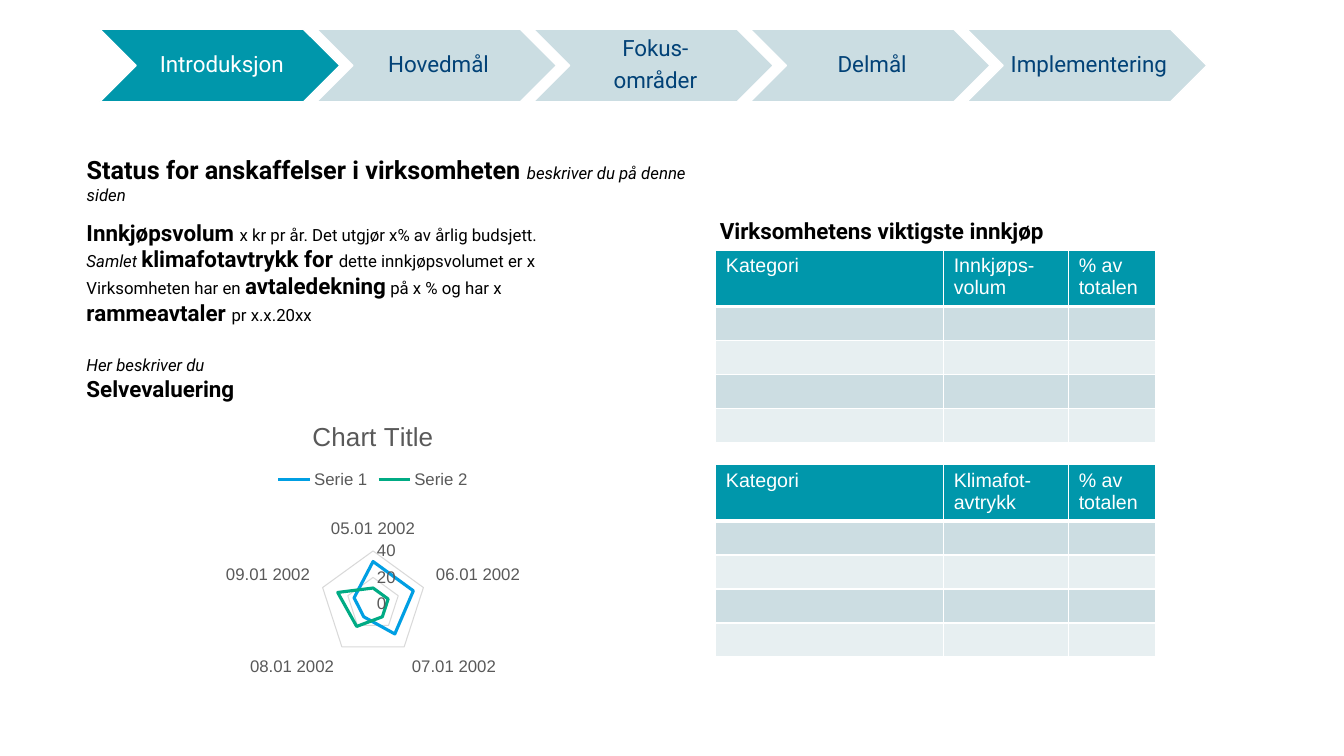
"""Build the procurement status slide with step arrows, status texts, a radar chart and two tables."""
from lxml.etree import SubElement
from pptx import Presentation
from pptx.chart.data import CategoryChartData
from pptx.dml.color import RGBColor
from pptx.enum.chart import XL_CHART_TYPE as ChartType, XL_LEGEND_POSITION as LegendPosition, XL_TICK_MARK as TickMark
from pptx.enum.shapes import MSO_SHAPE as Shape
from pptx.enum.text import MSO_ANCHOR as Anchor, MSO_AUTO_SIZE as AutoSize, PP_ALIGN as Align
from pptx.oxml.ns import qn
from pptx.util import Inches, Pt

COLORS = {
    "teal": "0097AB", "pale": "CBDDE2", "navy": "024277", "white": "FFFFFF", "black": "000000",
    "band": "CCDDE2", "light": "E7EFF1", "gray": "595959", "grid": "D9D9D9",
    "blue": "009FE3", "green": "00AB84",
}
STYLES = {
    "heading": {"size": Pt(18), "bold": True, "italic": False},
    "strong": {"size": Pt(16), "bold": True, "italic": False},
    "plain": {"size": Pt(12), "bold": False, "italic": False},
    "hint": {"size": Pt(12), "bold": False, "italic": True},
}

STEPS = [["Introduksjon"], ["Hovedmål"], ["Fokus-", "områder"], ["Delmål"], ["Implementering"]]
TITLE = [[("Status for anskaffelser i virksomheten ", "heading"), ("beskriver du på denne siden", "hint")]]
TEXTS = [
    ((0.76, 2.12, 5.1, 1.38), [
        [("Innkjøpsvolum ", "strong"), ("x kr pr år. Det utgjør x% av årlig budsjett.", "plain")],
        [("Samlet ", "hint"), ("klimafotavtrykk for ", "strong"), ("dette innkjøpsvolumet er x", "plain")],
        [("Virksomheten har en ", "plain"), ("avtaledekning", "strong"), (" på x % og har x ", "plain"),
         ("rammeavtaler ", "strong"), ("pr x.x.20xx", "plain")],
    ]),
    ((0.76, 3.47, 5.1, 0.6), [[("Her beskriver du", "hint")], [("Selvevaluering", "strong")]]),
    ((7.04, 2.11, 3.89, 0.37), [[("Virksomhetens viktigste innkjøp", "strong")]]),
]
TABLES = [
    [["Kategori"], ["Innkjøps-", "volum"], ["% av totalen"]],
    [["Kategori"], ["Klimafot-", "avtrykk"], ["% av totalen"]],
]
COLUMNS = [2.26, 1.24, 0.86]
ROWS = [0.56] + [0.33] * 4
DATES = ["05.01 2002", "06.01 2002", "07.01 2002", "08.01 2002", "09.01 2002"]
SERIES = [("Serie 1", [32, 32, 28, 12, 15], "blue"), ("Serie 2", [12, 12, 12, 21, 28], "green")]


def color(name):
    return RGBColor.from_string(COLORS[name])


def inches(values):
    return [Inches(value) for value in values]


def style_font(font, tint, name="Roboto", **values):
    for key, value in {"name": name, **values}.items():
        setattr(font, key, value)
    font.color.rgb = color(tint)


def write(frame, paragraphs):
    frame.word_wrap = True
    frame.auto_size = AutoSize.NONE
    frame.vertical_anchor = Anchor.TOP
    for index, spans in enumerate(paragraphs):
        para = frame.add_paragraph() if index else frame.paragraphs[0]
        para.alignment = Align.LEFT
        for text, style in spans:
            span = para.add_run()
            span.text = text
            style_font(span.font, "black", **STYLES[style])


def add_step(page, index, lines):
    active = index == 0
    step = page.shapes.add_shape(Shape.CHEVRON, *inches((0.99 + 2.15 * index, 0.29, 2.38, 0.72)))
    step.shadow.inherit = False
    step.fill.solid()
    step.fill.fore_color.rgb = color("teal" if active else "pale")
    step.line.color.rgb = color("white")
    step.line.width = Pt(1)
    frame = step.text_frame
    frame.word_wrap = True
    frame.vertical_anchor = Anchor.MIDDLE
    for side, margin in {"left": 0.06, "right": 0.02, "top": 0.02, "bottom": 0.02}.items():
        setattr(frame, f"margin_{side}", Inches(margin))
    frame.text = "\n".join(lines)
    for para in frame.paragraphs:
        para.alignment = Align.CENTER
        para.line_spacing = 0.9
        para.space_after = Pt(5.6)
        style_font(para.runs[0].font, "white" if active else "navy", size=Pt(16))


def add_borders(cell, bottom):
    properties = cell._tc.get_or_add_tcPr()
    for side, width in {"L": 1, "R": 1, "T": 1, "B": bottom}.items():
        line = SubElement(properties, qn(f"a:ln{side}"), w=str(Pt(width)))
        SubElement(SubElement(line, qn("a:solidFill")), qn("a:srgbClr"), val=COLORS["white"])


def add_table(page, index, header):
    place = inches((7.1, 2.48 + 2.13 * index, sum(COLUMNS), sum(ROWS)))
    table = page.shapes.add_table(len(ROWS), len(COLUMNS), *place).table
    for column, width in zip(table.columns, COLUMNS):
        column.width = Inches(width)
    for number, height in enumerate(ROWS):
        table.rows[number].height = Inches(height)
        tint = "teal" if number == 0 else ("light", "band")[number % 2]
        for position, lines in enumerate(header):
            cell = table.cell(number, position)
            add_borders(cell, 1 if number else 3)
            cell.fill.solid()
            cell.fill.fore_color.rgb = color(tint)
            if number:
                SubElement(cell.text_frame.paragraphs[0]._p, qn("a:endParaRPr"), sz="1400")
                continue
            cell.text = "\n".join(lines)
            for para in cell.text_frame.paragraphs:
                style_font(para.runs[0].font, "white", "Arial", size=Pt(14), bold=False)


def add_radar(page):
    data = CategoryChartData()
    data.categories = DATES
    for name, values, _ in SERIES:
        data.add_series(name, values)
    chart = page.shapes.add_chart(ChartType.RADAR, *inches((2.18, 4, 3.04, 2.97)), data).chart
    style_font(chart.font, "gray", "Arial", size=Pt(12))
    chart.has_title = True
    chart.chart_title.text_frame.text = "Chart Title"
    title_span = chart.chart_title.text_frame.paragraphs[0].runs[0]
    style_font(title_span.font, "gray", "Arial", size=Pt(18.6), bold=False)
    chart.has_legend = True
    chart.legend.position = LegendPosition.TOP
    chart.legend.include_in_layout = False
    style_font(chart.legend.font, "gray", "Arial", size=Pt(12))
    for axis in (chart.category_axis, chart.value_axis):
        axis.major_tick_mark = axis.minor_tick_mark = TickMark.NONE
        axis.has_major_gridlines = True
        style_font(axis.tick_labels.font, "gray", "Arial", size=Pt(12))
        for line in (axis.format.line, axis.major_gridlines.format.line):
            line.color.rgb = color("grid")
            line.width = Pt(0.75)
    scale = chart.value_axis
    scale.minimum_scale, scale.maximum_scale, scale.major_unit = 0, 40, 20
    scale.format.line.fill.background()
    chart.plots[0].vary_by_categories = False
    for series, (_, _, tint) in zip(chart.plots[0].series, SERIES):
        series.smooth = False
        series.format.line.color.rgb = color(tint)
        series.format.line.width = Pt(2.25)


def main():
    deck = Presentation()
    deck.slide_width, deck.slide_height = inches((13.33, 7.5))
    page = deck.slides.add_slide(deck.slide_layouts[5])
    title = page.shapes.title
    title.left, title.top, title.width, title.height = inches((0.76, 1.48, 6.4, 0.62))
    write(title.text_frame, TITLE)
    for place, paragraphs in TEXTS:
        write(page.shapes.add_textbox(*inches(place)).text_frame, paragraphs)
    for index, header in enumerate(TABLES):
        add_table(page, index, header)
    add_radar(page)
    for index, lines in enumerate(STEPS):
        add_step(page, index, lines)
    deck.save("out.pptx")


if __name__ == "__main__":
    main()
